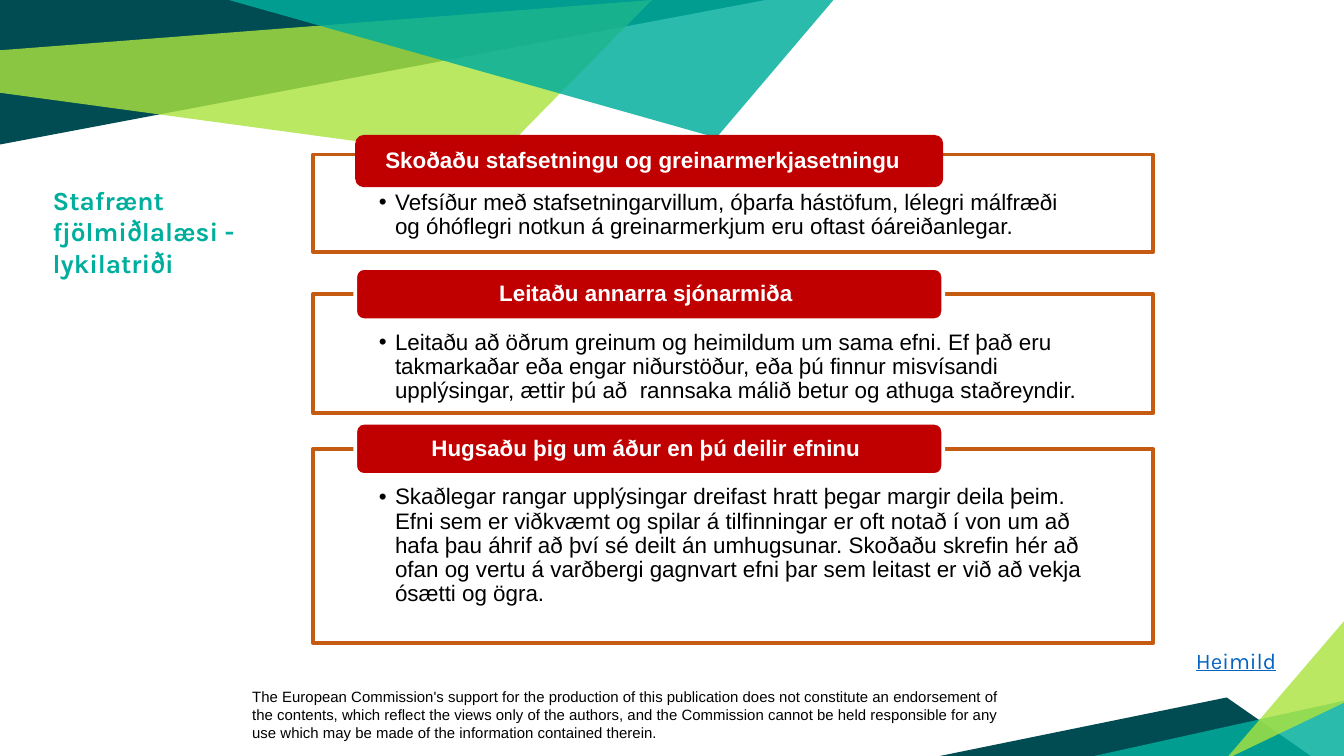
from lxml.etree import SubElement
from pptx import Presentation
from pptx.dml.color import RGBColor
from pptx.enum.shapes import MSO_SHAPE
from pptx.enum.text import MSO_ANCHOR, MSO_AUTO_SIZE, PP_ALIGN
from pptx.oxml.ns import qn
from pptx.util import Pt

DARK, LIME, TEAL = "004C52", "ABE33F", "00AE9D"
WHITE, BLACK, RED, ORANGE, BLUE = "FFFFFF", "000000", "C00000", "C55A11", "0563C1"

RIBBONS = [
    (DARK, 100, [(0, 0), (0, 77.4), (410, 0)]),
    (LIME, 81, [(-0.7, 27), (0, 49.7), (265, 85.7), (349.2, 0)]),
    (DARK, 100, [(501.8, 405.4), (702.7, 405.4), (657.2, 373.7)]),
    (TEAL, 83, [(721.4, 375.1), (721.4, 406.8), (578.2, 406.8)]),
    (LIME, 81, [(721.4, 375.8), (721.4, 331.2), (656.6, 406.8)]),
    (TEAL, 83, [(122.4, 0), (383.8, 73.8), (447.1, -0.7), (438.5, 0)]),
]

CARDS = [
    (82.8, 52.3, 72.3, None,
     "Skoðaðu stafsetningu og greinarmerkjasetningu  ",
     "Vefsíður með stafsetningarvillum, óþarfa hástöfum, lélegri málfræði "
     "og óhóflegri notkun á greinarmerkjum eru oftast óáreiðanlegar."),
    (157.5, 64, 143.6, WHITE,
     "Leitaðu annarra sjónarmiða ",
     "Leitaðu að öðrum greinum og heimildum um sama efni. Ef það eru "
     "takmarkaðar eða engar niðurstöður, eða þú finnur misvísandi upplýsingar, "
     "ættir þú að  rannsaka málið betur og athuga staðreyndir."),
    (240.5, 104.2, 226.5, WHITE,
     "Hugsaðu þig um áður en þú deilir efninu ",
     "Skaðlegar rangar upplýsingar dreifast hratt þegar margir deila þeim. "
     "Efni sem er viðkvæmt og spilar á tilfinningar er oft notað í von um að "
     "hafa þau áhrif að því sé deilt án umhugsunar. Skoðaðu skrefin hér að ofan "
     "og vertu á varðbergi gagnvart efni þar sem leitast er við að vekja ósætti og ögra."),
]


def color(value):
    return RGBColor.from_string(value)


def paint(shape, fill, opacity=100, line=None):
    shape.shadow.inherit = False
    shape.fill.solid()
    shape.fill.fore_color.rgb = color(fill)
    if opacity < 100:
        solid = shape.fill._xPr.find(qn("a:solidFill"))
        SubElement(solid[0], qn("a:alpha"), val=str(opacity * 1000))
    if line:
        shape.line.color.rgb = color(line)
        shape.line.width = Pt(2)
    else:
        shape.line.fill.background()


def write(shape, text, size, font, ink, bold=False, underline=False,
          align=PP_ALIGN.LEFT, anchor=MSO_ANCHOR.TOP,
          insets=(7.2, 3.6, 7.2, 3.6), wrap=True):
    frame = shape.text_frame
    frame.word_wrap = wrap
    frame.auto_size = MSO_AUTO_SIZE.NONE
    frame.vertical_anchor = anchor
    frame.margin_left, frame.margin_top, frame.margin_right, frame.margin_bottom = map(Pt, insets)
    para = frame.paragraphs[0]
    para.alignment = align
    span = para.add_run()
    span.text = text
    span.font.size = Pt(size)
    span.font.name = font
    span.font.bold = bold
    span.font.underline = underline
    span.font.color.rgb = color(ink)
    return para


def add_bullet(para):
    properties = para._p.get_or_add_pPr()
    properties.set("marL", str(Pt(8.64)))
    properties.set("indent", str(Pt(-8.64)))
    bullet_color = SubElement(properties, qn("a:buClr"))
    SubElement(bullet_color, qn("a:srgbClr"), val=BLACK)
    SubElement(properties, qn("a:buFont"), typeface="Arial")
    SubElement(properties, qn("a:buChar"), char="•")


def add_ribbon(page, fill, opacity, points):
    corners = [(Pt(x), Pt(y)) for x, y in points]
    builder = page.shapes.build_freeform(*corners[0])
    builder.add_line_segments(corners[1:], close=True)
    paint(builder.convert_to_shape(), fill, opacity)


def add_card(page, top, height, header_top, header_line, heading, body):
    panel = page.shapes.add_shape(MSO_SHAPE.RECTANGLE, Pt(167.7), Pt(top), Pt(450), Pt(height))
    paint(panel, WHITE, 90, ORANGE)
    para = write(panel, body, 12, "Arial", BLACK, insets=(35.3, 19.7, 35, 0))
    para.line_spacing = 0.9
    add_bullet(para)
    header = page.shapes.add_shape(
        MSO_SHAPE.ROUNDED_RECTANGLE, Pt(190.3), Pt(header_top), Pt(315), Pt(28))
    paint(header, RED, line=header_line)
    para = write(header, heading, 12, "Arial", WHITE, bold=True, align=PP_ALIGN.CENTER,
                 anchor=MSO_ANCHOR.MIDDLE, insets=(13.5, 0, 13.5, 0))
    para.line_spacing = 0.9


def add_text(page, left, top, width, height, text, size, font, ink, **style):
    box = page.shapes.add_textbox(Pt(left), Pt(top), Pt(width), Pt(height))
    write(box, text, size, font, ink, **style)


def add_title(page, text):
    title = page.shapes.title
    title.left, title.top, title.width, title.height = Pt(21), Pt(95.2), Pt(145), Pt(75)
    write(title, text, 14, "Karla", TEAL, bold=True)


def main():
    deck = Presentation()
    deck.slide_width, deck.slide_height = Pt(720), Pt(405)
    page = deck.slides.add_slide(deck.slide_layouts[5])
    add_title(page, "Stafrænt fjölmiðlalæsi - lykilatriði")
    add_text(page, 128, 365, 417, 36,
             "The European Commission's support for the production of this publication "
             "does not constitute an endorsement of the contents, which reflect the views "
             "only of the authors, and the Commission cannot be held responsible for any "
             "use which may be made of the information contained therein.",
             8, "Arial", BLACK)
    for ribbon in RIBBONS:
        add_ribbon(page, *ribbon)
    for card in CARDS:
        add_card(page, *card)
    add_text(page, 633.6, 343, 58.3, 21.6, "Heimild", 12, "Karla", BLUE,
             underline=True, wrap=False)
    deck.save("out.pptx")


if __name__ == "__main__":
    main()
